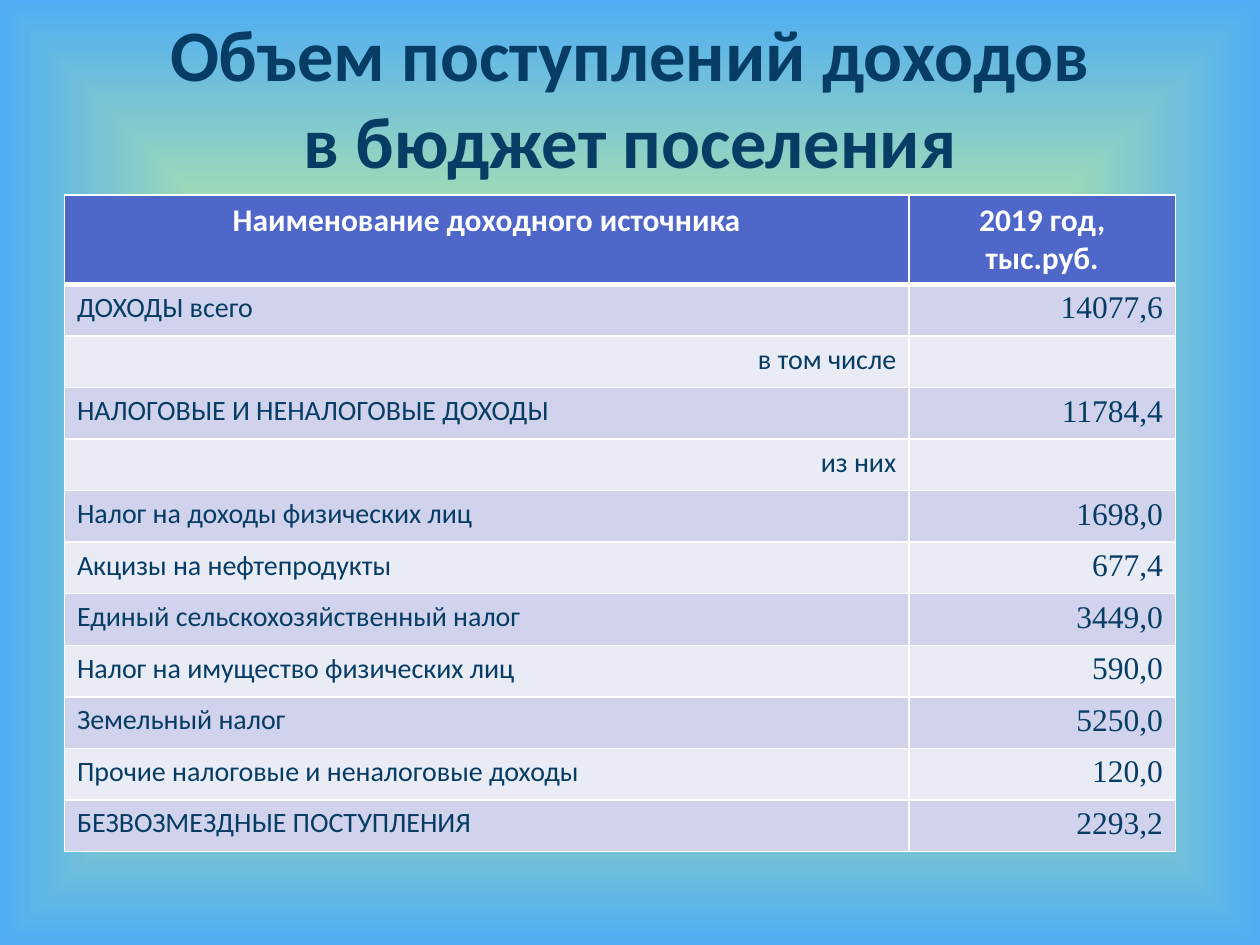
import pptx
import pptx.util
import pptx.dml.color
import pptx.enum.text
import pptx.oxml
import pptx.oxml.ns
from pptx.util import Cm

NAVY, WHITE, HEADER = "073C65", "FFFFFF", "4E67C8"
BANDS = ("D0D3EB", "E9EBF5")
ALIGN = pptx.enum.text.PP_ALIGN
HEADINGS = ("Наименование доходного источника", "2019 год, тыс.руб.")
INCOME = [
    ("ДОХОДЫ всего", "14077,6"),
    ("в том числе", ""),
    ("НАЛОГОВЫЕ И НЕНАЛОГОВЫЕ ДОХОДЫ", "11784,4"),
    ("из них", ""),
    ("Налог на доходы физических лиц", "1698,0"),
    ("Акцизы на нефтепродукты", "677,4"),
    ("Единый сельскохозяйственный налог", "3449,0"),
    ("Налог на имущество физических лиц", "590,0"),
    ("Земельный налог", "5250,0"),
    ("Прочие налоговые и неналоговые доходы", "120,0"),
    ("БЕЗВОЗМЕЗДНЫЕ ПОСТУПЛЕНИЯ", "2293,2"),
]


def rgb(value):
    """Return the colour for a hex string."""
    return pptx.dml.color.RGBColor.from_string(value)


def xml(text):
    """Parse a DrawingML fragment whose root tag lacks its namespace."""
    tag, rest = text.split(" ", 1)
    ns = pptx.oxml.ns.nsdecls("a")
    return pptx.oxml.parse_xml(f"{tag} {ns} {rest}")


def format_paragraph(p, size, color, align, name="Calibri", bold=False):
    """Set the font and alignment of a paragraph."""
    p.alignment = align
    p.font.size = pptx.util.Pt(size)
    p.font.name = name
    p.font.bold = bold
    p.font.color.rgb = rgb(color)


def set_background(s):
    """Fill the slide with a gradient from the centre to the edges."""
    fill = s.background.fill
    fill.gradient()
    for stop, color, position in zip(fill.gradient_stops, ("CAF297", "4FADF3"), (0.36, 1)):
        stop.color.rgb = rgb(color)
        stop.position = position
    grad = s.element.find(".//" + pptx.oxml.ns.qn("a:gradFill"))
    lin = grad.find(pptx.oxml.ns.qn("a:lin"))
    grad.replace(lin, xml(
        '<a:path path="shape"><a:fillToRect l="50000" t="50000" r="50000" b="50000"/></a:path>'))


def add_title(s, left, top, width, height):
    """Place the two-line title, its first line shifted to the left."""
    sp = s.shapes.title
    sp.left, sp.top, sp.width, sp.height = left, top, width, height
    tf = sp.text_frame
    tf.word_wrap = True
    tf.auto_size = pptx.enum.text.MSO_AUTO_SIZE.NONE
    tf.vertical_anchor = pptx.enum.text.MSO_ANCHOR.TOP
    tf.margin_top = Cm(0.18)
    tf.text = "Объем поступлений доходов\vв бюджет поселения"
    p = tf.paragraphs[0]
    format_paragraph(p, 41.4, NAVY, ALIGN.CENTER, bold=True)
    p.line_spacing = 1.0
    p.space_before = pptx.util.Pt(0)
    pPr = p._p.get_or_add_pPr()
    pPr.set("marL", "0")
    pPr.set("indent", str(-Cm(2)))


def format_cell(cell, fill, bottom=1):
    """Fill a cell and draw its white borders."""
    cell.fill.solid()
    cell.fill.fore_color.rgb = rgb(fill)
    tcPr = cell._tc.get_or_add_tcPr()
    for i, (side, width) in enumerate(zip("LRTB", (1, 1, 1, bottom))):
        tcPr.insert(i, xml(
            f'<a:ln{side} w="{pptx.util.Pt(width)}"><a:solidFill>'
            f'<a:srgbClr val="{WHITE}"/></a:solidFill></a:ln{side}>'))


def add_income_table(s, left, top, width, height):
    """Place the income table in the given box."""
    tbl = s.shapes.add_table(len(INCOME) + 1, 2, left, top, width, height).table
    tbl.columns[0].width = Cm(17.02)
    tbl.columns[1].width = width - Cm(17.02)
    tbl.rows[0].height = Cm(1.8)
    for r in range(1, len(INCOME) + 1):
        tbl.rows[r].height = (height - Cm(1.8)) // len(INCOME)
    for cell, text in zip(tbl.rows[0].cells, HEADINGS):
        cell.text = text
        format_paragraph(cell.text_frame.paragraphs[0], 18, WHITE, ALIGN.CENTER, bold=True)
        format_cell(cell, HEADER, bottom=3)
    for i, (label, value) in enumerate(INCOME):
        name, amount = tbl.rows[i + 1].cells
        name.text, amount.text = label, value
        align = ALIGN.LEFT if value else ALIGN.RIGHT
        format_paragraph(name.text_frame.paragraphs[0], 16, NAVY, align)
        format_paragraph(amount.text_frame.paragraphs[0], 18, NAVY, ALIGN.RIGHT, "Times New Roman")
        for cell in (name, amount):
            format_cell(cell, BANDS[i % 2])


def main():
    """Build and save the slide."""
    prs = pptx.Presentation()
    prs.slide_width, prs.slide_height = Cm(25.4), Cm(19.05)
    s = prs.slides.add_slide(prs.slide_layouts[5])
    set_background(s)
    add_title(s, Cm(1.27), Cm(0), Cm(22.86), Cm(3.33))
    add_income_table(s, Cm(1.3), Cm(3.93), Cm(22.4), Cm(13.23))
    prs.save("out.pptx")


if __name__ == "__main__":
    main()
